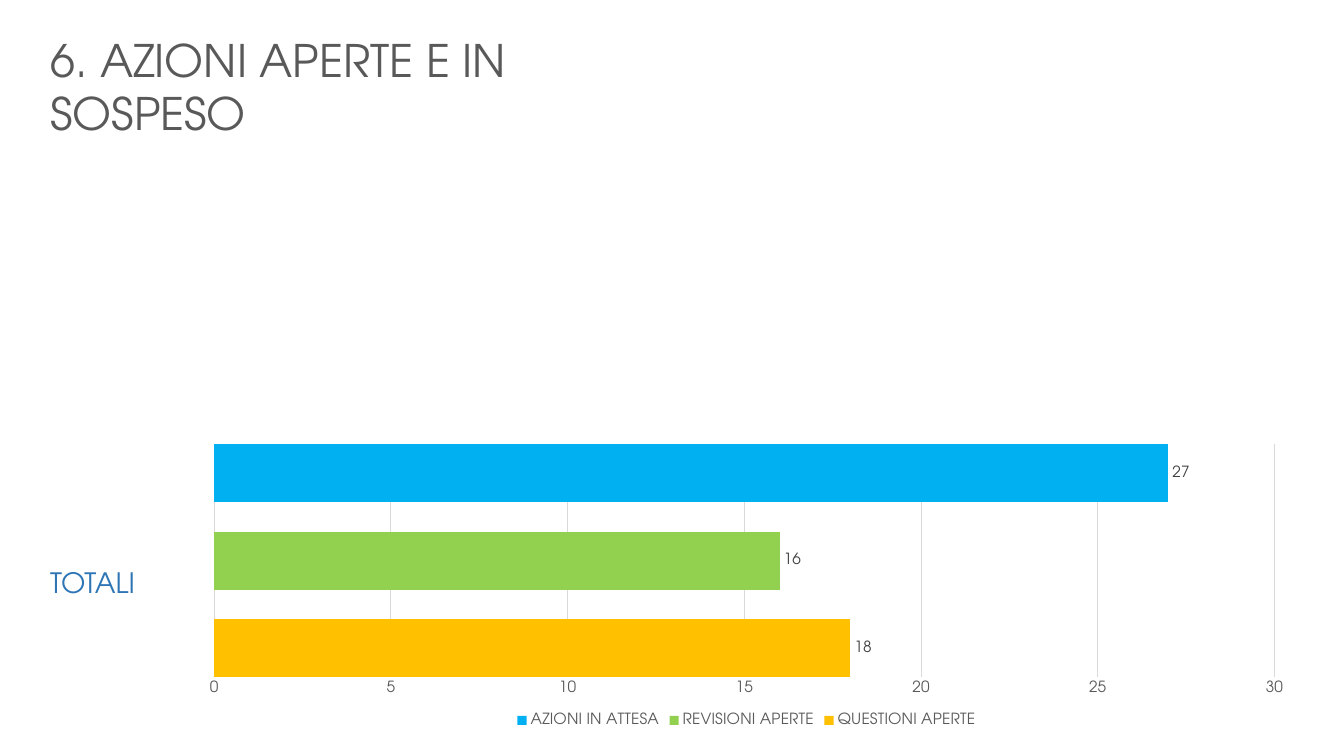
"""Build the slide on open and pending actions with its bar chart."""
import pptx
import pptx.chart.data
import pptx.dml.color
import pptx.enum.chart
import pptx.enum.text
import pptx.oxml
import pptx.oxml.ns
import pptx.util
from pptx.util import Inches

FONT = "TeX Gyre Adventor"
TITLE = "6. AZIONI APERTE E IN SOSPESO"
TOTALS_LABEL = "TOTALI"
CATEGORY = "1"
SERIES = [
    ("QUESTIONI APERTE", 18, "FFC000"),
    ("REVISIONI APERTE", 16, "92D050"),
    ("AZIONI IN ATTESA", 27, "00B0F0"),
]
GREY, LABEL_GREY, GRID_GREY = "595959", "404040", "D9D9D9"
BLUE, WHITE = "2E75B6", "FFFFFF"


def color(hex_value):
    return pptx.dml.color.RGBColor.from_string(hex_value)


def set_font(font, size, hex_value):
    font.name = FONT
    font.size = pptx.util.Pt(size)
    font.bold = False
    font.color.rgb = color(hex_value)


def write_text(shape, text, size, hex_value, wrap):
    frame = shape.text_frame
    frame.text = text
    frame.word_wrap = wrap
    frame.auto_size = pptx.enum.text.MSO_AUTO_SIZE.SHAPE_TO_FIT_TEXT
    frame.vertical_anchor = pptx.enum.text.MSO_ANCHOR.TOP
    paragraph = frame.paragraphs[0]
    paragraph.alignment = pptx.enum.text.PP_ALIGN.LEFT
    set_font(paragraph.font, size, hex_value)


def fill_chart_area(chart, hex_value):
    properties = pptx.oxml.parse_xml(
        f'<c:spPr {pptx.oxml.ns.nsdecls("c", "a")}><a:solidFill>'
        f'<a:srgbClr val="{hex_value}"/></a:solidFill>'
        '<a:ln><a:noFill/></a:ln></c:spPr>')
    chart.element.find(pptx.oxml.ns.qn("c:chart")).addnext(properties)


def add_actions_chart(slide):
    data = pptx.chart.data.CategoryChartData(number_format="0")
    data.categories = [CATEGORY]
    for name, value, _ in SERIES:
        data.add_series(name, [value])
    chart = slide.shapes.add_chart(
        pptx.enum.chart.XL_CHART_TYPE.BAR_CLUSTERED,
        Inches(1.86), Inches(4.35), Inches(11.09), Inches(2.91), data).chart
    chart.has_title = False
    set_font(chart.font, 11, "000000")
    fill_chart_area(chart, WHITE)

    chart.has_legend = True
    chart.legend.position = pptx.enum.chart.XL_LEGEND_POSITION.BOTTOM
    chart.legend.include_in_layout = False
    set_font(chart.legend.font, 11, GREY)

    chart.category_axis.visible = False
    axis = chart.value_axis
    axis.minimum_scale = 0
    axis.major_tick_mark = pptx.enum.chart.XL_TICK_MARK.NONE
    axis.format.line.fill.background()
    axis.major_gridlines.format.line.color.rgb = color(GRID_GREY)
    axis.major_gridlines.format.line.width = pptx.util.Pt(0.75)
    axis.tick_labels.number_format = "0"
    axis.tick_labels.number_format_is_linked = False
    set_font(axis.tick_labels.font, 11, GREY)

    plot = chart.plots[0]
    plot.vary_by_categories = False
    plot.gap_width = 0
    plot.overlap = -50
    for series, (_, _, hex_value) in zip(plot.series, SERIES):
        series.format.fill.solid()
        series.format.fill.fore_color.rgb = color(hex_value)
        labels = series.data_labels
        labels.show_value = True
        labels.number_format = "0"
        labels.number_format_is_linked = False
        labels.position = pptx.enum.chart.XL_LABEL_POSITION.OUTSIDE_END
        set_font(labels.font, 11, LABEL_GREY)


def main():
    presentation = pptx.Presentation()
    presentation.slide_width = Inches(13.33)
    presentation.slide_height = Inches(7.5)
    slide = presentation.slides.add_slide(presentation.slide_layouts[5])

    add_actions_chart(slide)
    totals = slide.shapes.add_textbox(
        Inches(0.4), Inches(5.56), Inches(1.16), Inches(0.44))
    write_text(totals, TOTALS_LABEL, 20, BLUE, False)

    title = slide.shapes.title
    title.left, title.top = Inches(0.4), Inches(0.27)
    title.width, title.height = Inches(6.57), Inches(0.64)
    write_text(title, TITLE, 32, GREY, True)
    presentation.save("out.pptx")


if __name__ == "__main__":
    main()
